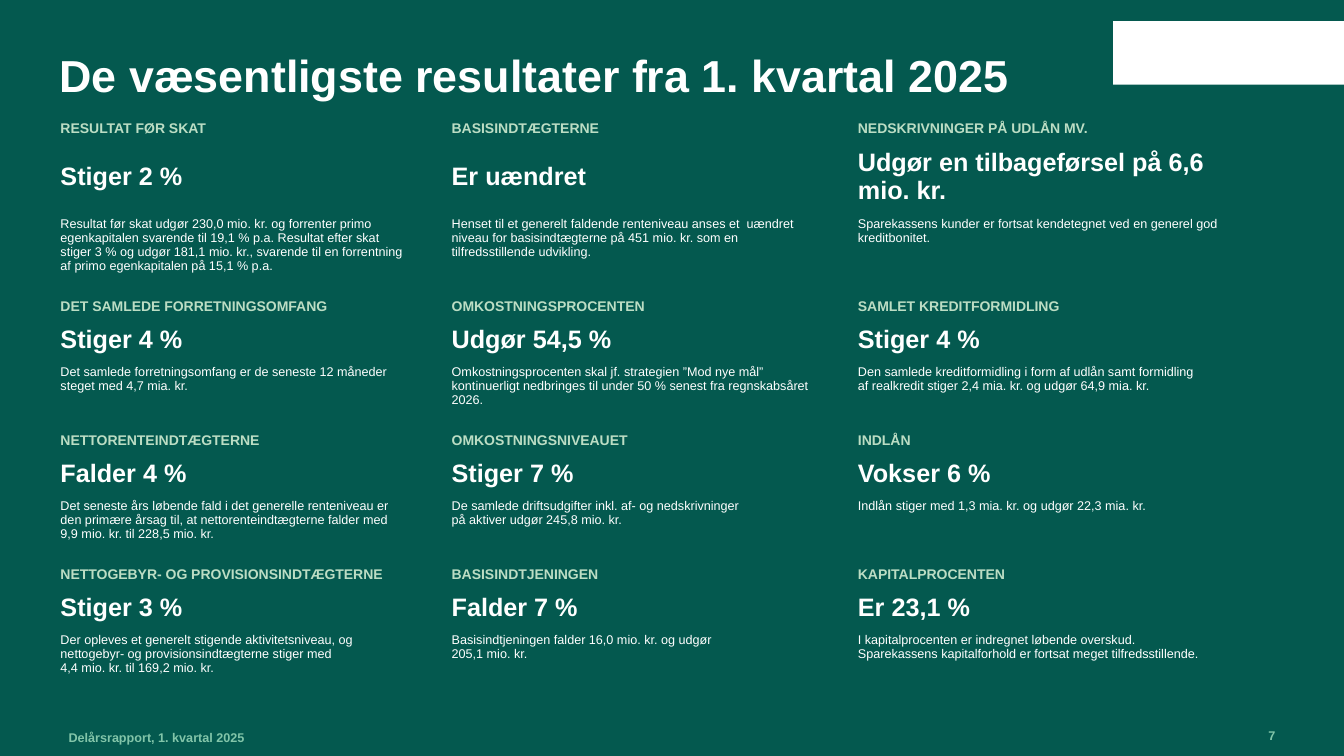
from dataclasses import dataclass

from pptx import Presentation, util as u
from pptx.dml.color import RGBColor
from pptx.enum import shapes, text


@dataclass(frozen=True)
class Theme:
    font: str = "Arial"
    back: str = "04594F"
    white: str = "FFFFFF"
    mint: str = "BCDDC4"
    foot: str = "82C5A9"
    title: int = 32
    head: int = 18
    label: int = 10
    small: int = 9


# "No Style, No Grid" table style
PLAIN = "{2D5ABB26-0587-4C30-8999-92F81FD0307C}"
TOP, MID, LOW = (text.MSO_ANCHOR.TOP, text.MSO_ANCHOR.MIDDLE,
                 text.MSO_ANCHOR.BOTTOM)

# Each block: three columns of (label, headline, body)
BLOCKS = [
    [("RESULTAT FØR SKAT", "Stiger 2 %",
      "Resultat før skat udgør 230,0 mio. kr. og forrenter primo "
      "egenkapitalen svarende til 19,1 % p.a. Resultat efter skat stiger 3 % "
      "og udgør 181,1 mio. kr., svarende til en forrentning af primo "
      "egenkapitalen på 15,1 % p.a."),
     ("BASISINDTÆGTERNE", "Er uændret",
      "Henset til et generelt faldende renteniveau anses et  uændret niveau "
      "for basisindtægterne på 451 mio. kr. som en tilfredsstillende "
      "udvikling."),
     ("NEDSKRIVNINGER PÅ UDLÅN MV.", "Udgør en tilbageførsel på 6,6 mio. kr.",
      "Sparekassens kunder er fortsat kendetegnet ved en generel god "
      "kreditbonitet.")],
    [("DET SAMLEDE FORRETNINGSOMFANG", "Stiger 4 %",
      "Det samlede forretningsomfang er de seneste 12 måneder steget med "
      "4,7 mia. kr."),
     ("OMKOSTNINGSPROCENTEN", "Udgør 54,5 %",
      "Omkostningsprocenten skal jf. strategien ”Mod nye mål” kontinuerligt "
      "nedbringes til under 50 % senest fra regnskabsåret 2026."),
     ("SAMLET KREDITFORMIDLING", "Stiger 4 %",
      "Den samlede kreditformidling i form af udlån samt formidling\n"
      "af realkredit stiger 2,4 mia. kr. og udgør 64,9 mia. kr.")],
    [("NETTORENTEINDTÆGTERNE", "Falder 4 %",
      "Det seneste års løbende fald i det generelle renteniveau er den "
      "primære årsag til, at nettorenteindtægterne falder med 9,9 mio. kr. "
      "til 228,5 mio. kr."),
     ("OMKOSTNINGSNIVEAUET", "Stiger 7 %",
      "De samlede driftsudgifter inkl. af- og nedskrivninger\n"
      "på aktiver udgør 245,8 mio. kr."),
     ("INDLÅN", "Vokser 6 %",
      "Indlån stiger med 1,3 mia. kr. og udgør 22,3 mia. kr.")],
    [("NETTOGEBYR- OG PROVISIONSINDTÆGTERNE", "Stiger 3 %",
      "Der opleves et generelt stigende aktivitetsniveau, og\n"
      "nettogebyr- og provisionsindtægterne stiger med\n"
      "4,4 mio. kr. til 169,2 mio. kr."),
     ("BASISINDTJENINGEN", "Falder 7 %",
      "Basisindtjeningen falder 16,0 mio. kr. og udgør\n205,1 mio. kr."),
     ("KAPITALPROCENTEN", "Er 23,1 %",
      "I kapitalprocenten er indregnet løbende overskud.\n"
      "Sparekassens kapitalforhold er fortsat meget tilfredsstillende.")],
]
COLS = [3.6, 0.28, 3.79, 0.23, 3.91]
ROWS = [0.3, 0.66, 0.8] + [0.27, 0.38, 0.66] * 2 + [0.27, 0.38, 0.83]


class Deck:
    def __init__(self, theme):
        self.theme = theme
        self.prs = Presentation()
        self.prs.slide_width = u.Inches(13.33)
        self.prs.slide_height = u.Inches(7.5)
        self.slide = self.prs.slides.add_slide(self.prs.slide_layouts[6])
        self.paint(self.slide.background.fill, theme.back)

    def paint(self, fill, color):
        fill.solid()
        fill.fore_color.rgb = RGBColor.from_string(color)

    def put(self, frame, words, size, color, bold=True, **form):
        """Fill a text frame, one paragraph for each line of words."""
        frame.text = words
        look = {"name": self.theme.font, "size": u.Pt(size), "bold": bold}
        for par in frame.paragraphs:
            for key, val in form.items():
                setattr(par, key, val)
            for run in par.runs:
                for key, val in look.items():
                    setattr(run.font, key, val)
                run.font.color.rgb = RGBColor.from_string(color)

    def text(self, area, words, size, color, anchor=TOP, **form):
        frame = self.slide.shapes.add_textbox(*map(u.Inches, area)).text_frame
        props = {"word_wrap": True, "vertical_anchor": anchor,
                 "margin_left": 0, "margin_right": 0,
                 "margin_top": 0, "margin_bottom": 0}
        for key, val in props.items():
            setattr(frame, key, val)
        self.put(frame, words, size, color, **form)

    def panel(self, area, color):
        box = self.slide.shapes.add_shape(
            shapes.MSO_SHAPE.RECTANGLE, *map(u.Inches, area))
        box.shadow.inherit = False
        self.paint(box.fill, color)
        box.line.fill.background()

    def table(self, left, top, blocks, cols, rows):
        """Stack blocks of label, headline and body rows, with gap columns."""
        area = map(u.Inches, (left, top, sum(cols), sum(rows)))
        grid = self.slide.shapes.add_table(len(rows), len(cols), *area).table
        grid.first_row = grid.horz_banding = False
        grid._tbl.tblPr[0].text = PLAIN
        for col, wide in zip(grid.columns, cols):
            col.width = u.Inches(wide)
        for row, high in zip(grid.rows, rows):
            row.height = u.Inches(high)
        for cell in grid.iter_cells():
            cell.fill.background()
            # Keeps blank gap cells from stretching their row
            end = cell.text_frame.paragraphs[0]._p.get_or_add_endParaRPr()
            end.set("sz", str(self.theme.small * 100))

        look = self.theme
        kinds = [(look.label, look.mint, True, LOW),
                 (look.head, look.white, True, MID),
                 (look.small, look.white, False, TOP)]
        for b, block in enumerate(blocks):
            for c, facts in enumerate(block):
                for k, (words, kind) in enumerate(zip(facts, kinds)):
                    size, color, bold, anchor = kind
                    cell = grid.cell(b * len(kinds) + k, c * 2)
                    cell.vertical_anchor = anchor
                    self.put(cell.text_frame, words, size, color, bold)


def main():
    look = Theme()
    deck = Deck(look)
    deck.panel((11.04, 0.21, 2.29, 0.63), look.white)
    deck.text((0.59, 0.53, 11.97, 0.68),
              "De væsentligste resultater fra 1. kvartal 2025",
              look.title, look.white, line_spacing=0.9)
    deck.text((11.4, 7.09, 1.25, 0.28), "7", look.small, look.foot, LOW,
              alignment=text.PP_ALIGN.RIGHT)
    deck.table(0.5, 1.1, BLOCKS, COLS, ROWS)
    deck.text((0.68, 7.11, 4.92, 0.28), "Delårsrapport, 1. kvartal 2025",
              look.small, look.foot, LOW)
    deck.prs.save("out.pptx")


if __name__ == "__main__":
    main()
